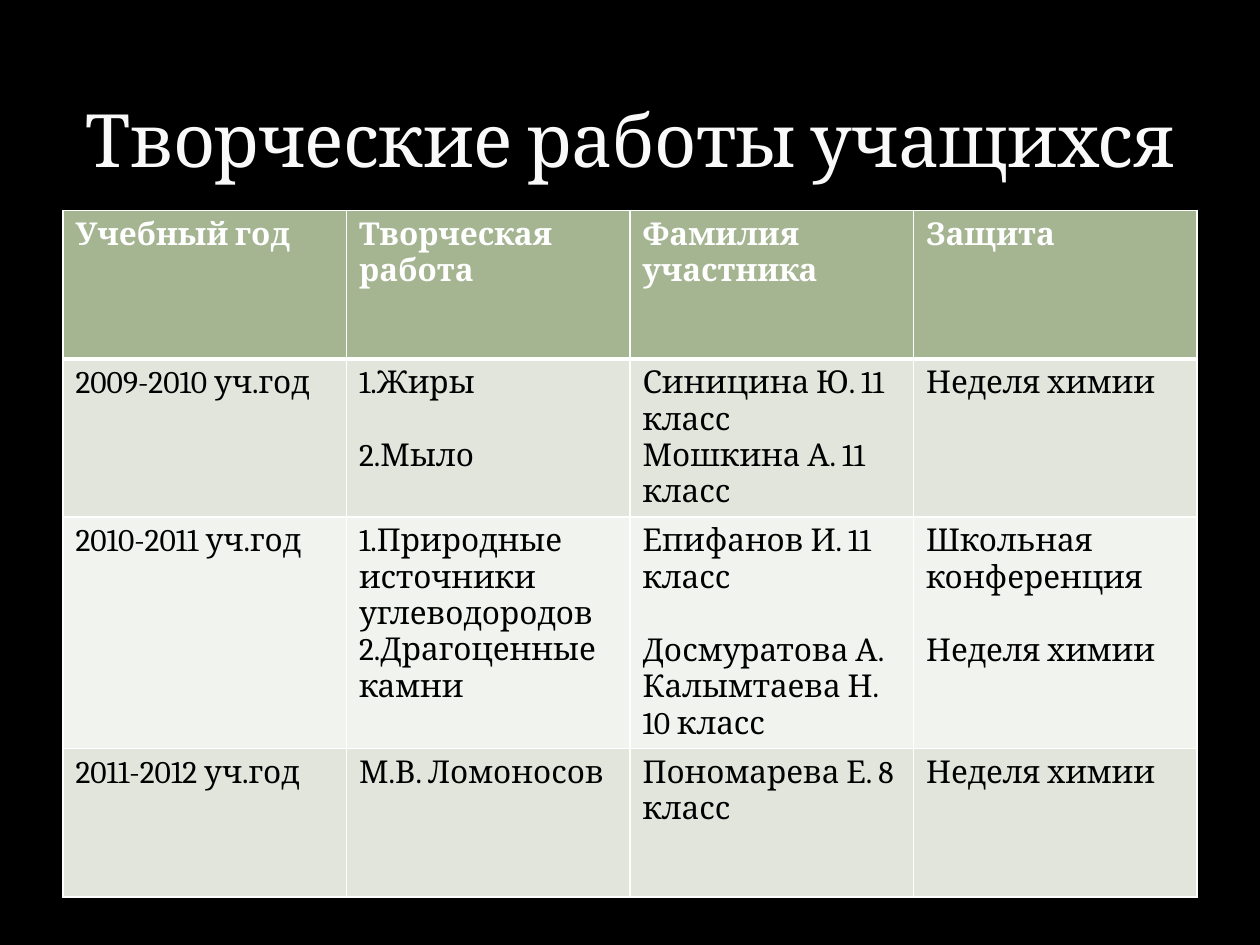
from pptx import Presentation, util as u
from pptx.dml.color import RGBColor
from pptx.enum import text
from pptx.oxml import parse_xml
from pptx.oxml.ns import nsdecls

BLACK = RGBColor(0x00, 0x00, 0x00)
WHITE = RGBColor(0xFF, 0xFF, 0xFF)
TITLE_WHITE = RGBColor(0xF9, 0xF9, 0xF9)
HEADER_GREEN = RGBColor(0xA5, 0xB5, 0x92)
BAND_DARK = RGBColor(0xE1, 0xE5, 0xDC)
BAND_LIGHT = RGBColor(0xF0, 0xF3, 0xEE)
FONT = "Cambria"
LINE_GAP = 21

HEADINGS = ["Учебный год", "Творческая работа", "Фамилия участника", "Защита"]
WORKS = [
    ["2009-2010 уч.год", ["1.Жиры", ("2.Мыло", LINE_GAP)],
     ["Синицина Ю. 11 класс", "Мошкина А. 11 класс"], "Неделя химии"],
    ["2010-2011 уч.год",
     ["1.Природные источники углеводородов", "2.Драгоценные камни"],
     ["Епифанов И. 11 класс", ("Досмуратова А.", LINE_GAP), "Калымтаева Н. 10 класс"],
     ["Школьная конференция", ("Неделя химии", LINE_GAP)]],
    ["2011-2012 уч.год", "М.В. Ломоносов", "Пономарева Е. 8 класс", "Неделя химии"],
]


def write(paragraph, wording, size=18, color=BLACK, bold=False, align=None,
          before=0, spacing=None):
    """Put formatted wording into a paragraph."""
    paragraph.alignment = align
    if before:
        paragraph.space_before = u.Pt(before)
    run = paragraph.add_run()
    run.text = wording
    run.font.name = FONT
    run.font.size = u.Pt(size)
    run.font.bold = bold
    run.font.color.rgb = color
    if spacing is not None:
        run.font._element.set("spc", str(spacing))


def set_borders(cell, **widths):
    """Draw white cell borders with widths in points keyed by side."""
    properties = cell._tc.get_or_add_tcPr()
    for side, width in widths.items():
        properties.append(parse_xml(
            f'<a:ln{side} {nsdecls("a")} w="{u.Pt(width)}"><a:solidFill>'
            f'<a:srgbClr val="{WHITE}"/></a:solidFill></a:ln{side}>'))


def fill_cell(cell, lines, fill, color=BLACK, bold=False, top=1, bottom=1):
    """Write the lines of a cell, with its borders and fill."""
    set_borders(cell, L=1, R=1, T=top, B=bottom)
    cell.fill.solid()
    cell.fill.fore_color.rgb = fill
    for index, line in enumerate([lines] if isinstance(lines, str) else lines):
        wording, before = (line, 0) if isinstance(line, str) else line
        frame = cell.text_frame
        paragraph = frame.add_paragraph() if index else frame.paragraphs[0]
        write(paragraph, wording, color=color, bold=bold, before=before)


def place_title(slide, left, top, width, height):
    """Place the slide title in the given box."""
    title = slide.shapes.title
    title.left, title.top, title.width, title.height = left, top, width, height
    title.text_frame.vertical_anchor = text.MSO_ANCHOR.BOTTOM
    write(title.text_frame.paragraphs[0], "Творческие работы учащихся", size=42,
          color=TITLE_WHITE, align=text.PP_ALIGN.CENTER, spacing=-40)


def place_works(slide, left, top, width, row_height):
    """Place the table of student works in the given box."""
    row_count = len(WORKS) + 1
    works = slide.shapes.add_table(row_count, len(HEADINGS), left, top, width,
                                   row_height * row_count).table
    for column, heading in enumerate(HEADINGS):
        fill_cell(works.cell(0, column), heading, HEADER_GREEN, WHITE, True, bottom=3)
    for row, entries in enumerate(WORKS, start=1):
        band = BAND_DARK if row % 2 else BAND_LIGHT
        for column, lines in enumerate(entries):
            fill_cell(works.cell(row, column), lines, band, top=3 if row == 1 else 1)


def main():
    """Build and save the slide."""
    deck = Presentation()
    deck.slide_width, deck.slide_height = u.Inches(10), u.Inches(7.5)
    slide = deck.slides.add_slide(deck.slide_layouts[5])
    slide.background.fill.solid()
    slide.background.fill.fore_color.rgb = BLACK
    place_works(slide, u.Inches(0.5), u.Inches(1.67), u.Inches(9), u.Inches(1.18))
    place_title(slide, u.Inches(0.5), u.Inches(0.17), u.Inches(9), u.Inches(1.33))
    deck.save("out.pptx")


if __name__ == "__main__":
    main()
